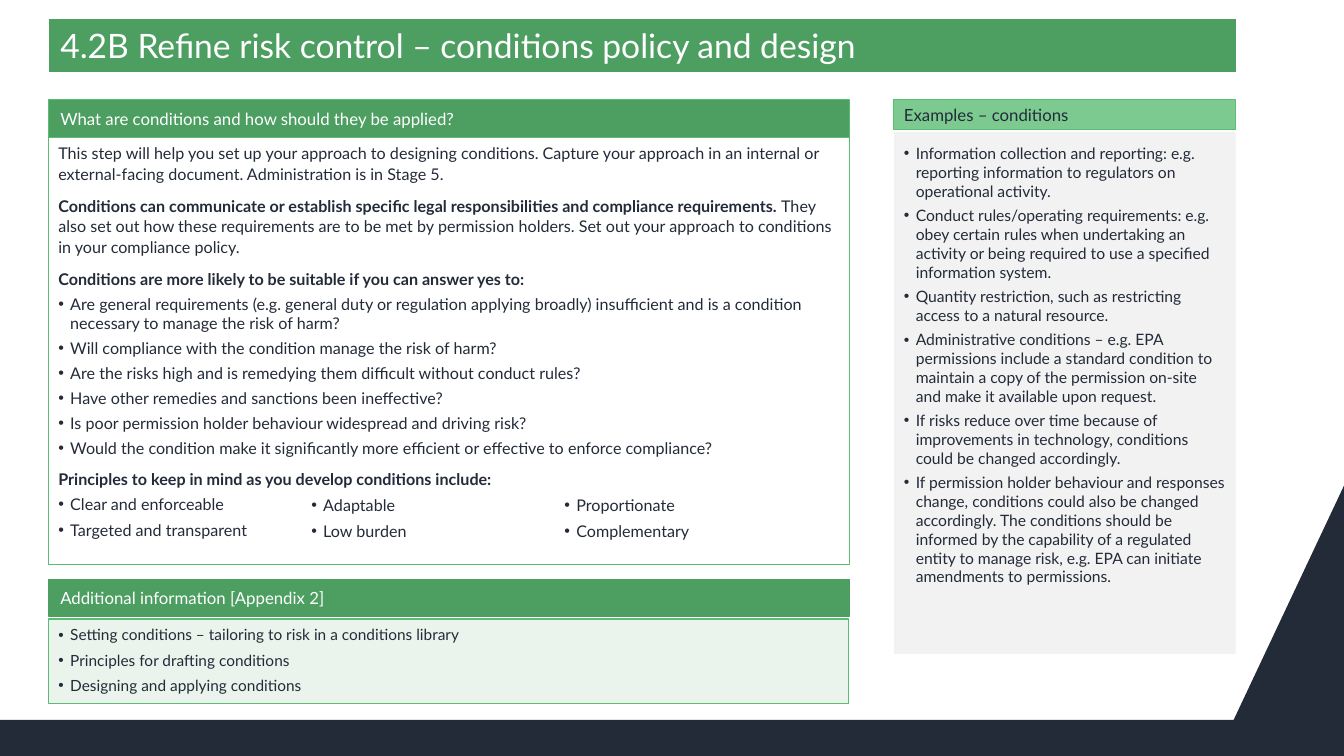
from dataclasses import dataclass

from lxml.etree import SubElement
from pptx import Presentation
from pptx.dml.color import RGBColor
from pptx.enum.shapes import MSO_SHAPE as Preset
from pptx.enum.text import MSO_ANCHOR as Anchor, MSO_AUTO_SIZE as AutoSize, PP_ALIGN as Align
from pptx.oxml.ns import qn
from pptx.util import Cm, Pt

COLOURS = {
    "navy": "232B39",
    "green": "4C9E61",
    "border": "5BBD74",
    "light_green": "7CCA90",
    "mint": "EAF4EC",
    "grey": "F2F2F2",
    "white": "FFFFFF",
}
BODY_INSETS = (0.25, 0.13, 0.25, 0.13)
BAR_INSETS = (0.3, 0, 0.5, 0)

LEFT, MAIN_WIDTH = 1.22, 20.19
SIDE_LEFT, SIDE_WIDTH = 22.53, 8.61
TOP = 2.51


@dataclass
class Item:
    text: str
    bullet: bool = True
    bold: bool = False
    rest: str = ""
    before: float = 2
    spacing: float = 1.0


@dataclass
class SlideBuilder:
    slide: object
    font: str = "Lato"

    def colour(self, name):
        return RGBColor.from_string(COLOURS[name])

    def paint(self, shape, fill, line=None, width=1):
        shape.fill.solid()
        shape.fill.fore_color.rgb = self.colour(fill)
        if line:
            shape.line.color.rgb = self.colour(line)
            shape.line.width = Pt(width)
        else:
            shape.line.fill.background()

    def place(self, shape, box):
        shape.left, shape.top, shape.width, shape.height = map(Cm, box)

    def frame(self, shape, insets, anchor=Anchor.TOP):
        frame = shape.text_frame
        frame.word_wrap = True
        frame.auto_size = AutoSize.NONE
        frame.vertical_anchor = anchor
        (frame.margin_left, frame.margin_top,
         frame.margin_right, frame.margin_bottom) = map(Cm, insets)
        return frame

    def style(self, paragraph, size, colour, bold=False):
        paragraph.alignment = Align.LEFT
        for run in paragraph.runs:
            run.font.name = self.font
            run.font.size = Pt(size)
            run.font.bold = bold
            run.font.color.rgb = self.colour(colour)

    def rectangle(self, box, fill, line=None, width=1):
        shape = self.slide.shapes.add_shape(Preset.RECTANGLE, *map(Cm, box))
        shape.shadow.inherit = False
        self.paint(shape, fill, line, width)
        return shape

    def corner(self, points):
        start, *others = [(Cm(x), Cm(y)) for x, y in points]
        builder = self.slide.shapes.build_freeform(*start)
        builder.add_line_segments(others, close=True)
        shape = builder.convert_to_shape()
        shape.shadow.inherit = False
        self.paint(shape, "navy")

    def title(self, text, box):
        heading = self.slide.shapes.title
        self.place(heading, box)
        self.paint(heading, "green", "white")
        frame = self.frame(heading, (0.3, 0.03, 0.53, 0.03), Anchor.MIDDLE)
        frame.text = text
        self.style(frame.paragraphs[0], 24, "white")

    def bar(self, text, box, fill="green", line="green", width=1,
            colour="white", insets=BAR_INSETS):
        shape = self.rectangle(box, fill, line, width)
        frame = self.frame(shape, insets, Anchor.MIDDLE)
        frame.text = text
        self.style(frame.paragraphs[0], 12, colour)

    def placeholder(self, index, box, fill, line=None):
        body = self.slide.placeholders[index]
        self.place(body, box)
        self.paint(body, fill, line)
        return body

    def items(self, shape, items, size, insets=BODY_INSETS):
        frame = self.frame(shape, insets)
        frame.text = "\n".join(item.text for item in items)
        for paragraph, item in zip(frame.paragraphs, items):
            self.style(paragraph, size, "navy", item.bold)
            if item.rest:
                paragraph.add_run().text = item.rest
                self.style(paragraph, size, "navy")
                paragraph.runs[0].font.bold = item.bold
            paragraph.line_spacing = item.spacing
            paragraph.space_before = Pt(item.before)
            paragraph.space_after = Pt(2)
            self.bullet(paragraph, item.bullet)

    def bullet(self, paragraph, shown):
        properties = paragraph._p.get_or_add_pPr()
        indent = Cm(0.3) if shown else 0
        properties.set("marL", str(indent))
        properties.set("indent", str(-indent))
        if shown:
            SubElement(properties, qn("a:buFont"), typeface="Arial")
            SubElement(properties, qn("a:buChar"), char="•")
        else:
            SubElement(properties, qn("a:buNone"))

    def columns(self, items, box, count, size):
        shape = self.slide.shapes.add_textbox(*map(Cm, box))
        self.items(shape, items, size, (0.1, 0.13, 0.25, 0.13))
        shape.text_frame._txBody.bodyPr.set("numCol", str(count))


GUIDANCE = [
    Item("This step will help you set up your approach to designing conditions. Capture your "
         "approach in an internal or external-facing document. Administration is in Stage 5.",
         bullet=False, spacing=1.07),
    Item("Conditions can communicate or establish specific legal responsibilities and "
         "compliance requirements. ", bullet=False, bold=True, before=6, spacing=1.07,
         rest="They also set out how these requirements are to be met by permission holders. "
              "Set out your approach to conditions in your compliance policy."),
    Item("Conditions are more likely to be suitable if you can answer yes to:",
         bullet=False, bold=True, before=6, spacing=1.07),
    Item("Are general requirements (e.g. general duty or regulation applying broadly) "
         "insufficient and is a condition necessary to manage the risk of harm?"),
    Item("Will compliance with the condition manage the risk of harm?"),
    Item("Are the risks high and is remedying them difficult without conduct rules?"),
    Item("Have other remedies and sanctions been ineffective?"),
    Item("Is poor permission holder behaviour widespread and driving risk?"),
    Item("Would the condition make it significantly more efficient or effective to enforce "
         "compliance?"),
    Item("Principles to keep in mind as you develop conditions include:",
         bullet=False, bold=True, before=6),
]
PRINCIPLES = [Item("Clear and enforceable")] + [
    Item(text, spacing=1.07)
    for text in ("Targeted and transparent", "Adaptable", "Low burden",
                 "Proportionate", "Complementary")
]
APPENDIX = [
    Item(text, spacing=1.07)
    for text in ("Setting conditions – tailoring to risk in a conditions library",
                 "Principles for drafting conditions",
                 "Designing and applying conditions")
]
EXAMPLES = [
    Item("Information collection and reporting: e.g. reporting information to regulators on "
         "operational activity."),
    Item("Conduct rules/operating requirements: e.g. obey certain rules when undertaking an "
         "activity or being required to use a specified information system."),
    Item("Quantity restriction, such as restricting access to a natural resource."),
    Item("Administrative conditions – e.g. EPA permissions include a standard condition to "
         "maintain a copy of the permission on-site and make it available upon request."),
    Item("If risks reduce over time because of improvements in technology, conditions could be "
         "changed accordingly."),
    Item("If permission holder behaviour and responses change, conditions could also be changed "
         "accordingly. The conditions should be informed by the capability of a regulated entity "
         "to manage risk, e.g. EPA can initiate amendments to permissions."),
]


def main():
    deck = Presentation()
    deck.slide_width, deck.slide_height = Cm(33.87), Cm(19.05)
    page = SlideBuilder(deck.slides.add_slide(deck.slide_layouts[3]))

    page.corner([(31.09, 18.14), (0, 18.14), (0, 19.05), (33.87, 19.05), (33.87, 12.24)])
    page.title("4.2B Refine risk control – conditions policy and design",
               (LEFT, 0.46, 29.95, 1.37))

    guidance = page.placeholder(1, (LEFT, 3.45, MAIN_WIDTH, 10.77), "white", "border")
    page.items(guidance, GUIDANCE, 11.5)
    page.bar("What are conditions and how should they be applied?",
             (LEFT, TOP, MAIN_WIDTH, 0.95), line="border")
    page.columns(PRINCIPLES, (1.37, 12.32, 19.48, 1.7), 3, 11.5)

    page.bar("Additional information [Appendix 2]", (LEFT, 14.61, MAIN_WIDTH, 0.91))
    appendix = page.rectangle((LEFT, 15.6, 20.17, 2.13), "mint", "border")
    page.items(appendix, APPENDIX, 11)

    examples = page.placeholder(2, (SIDE_LEFT, 3.33, SIDE_WIDTH, 13.15), "grey")
    page.items(examples, EXAMPLES, 11.2, (0.25, 0.3, 0.25, 0.13))
    page.bar("Examples – conditions", (SIDE_LEFT, TOP, SIDE_WIDTH, 0.76),
             "light_green", "border", 0.75, "navy", BODY_INSETS)

    deck.save("out.pptx")


if __name__ == "__main__":
    main()
